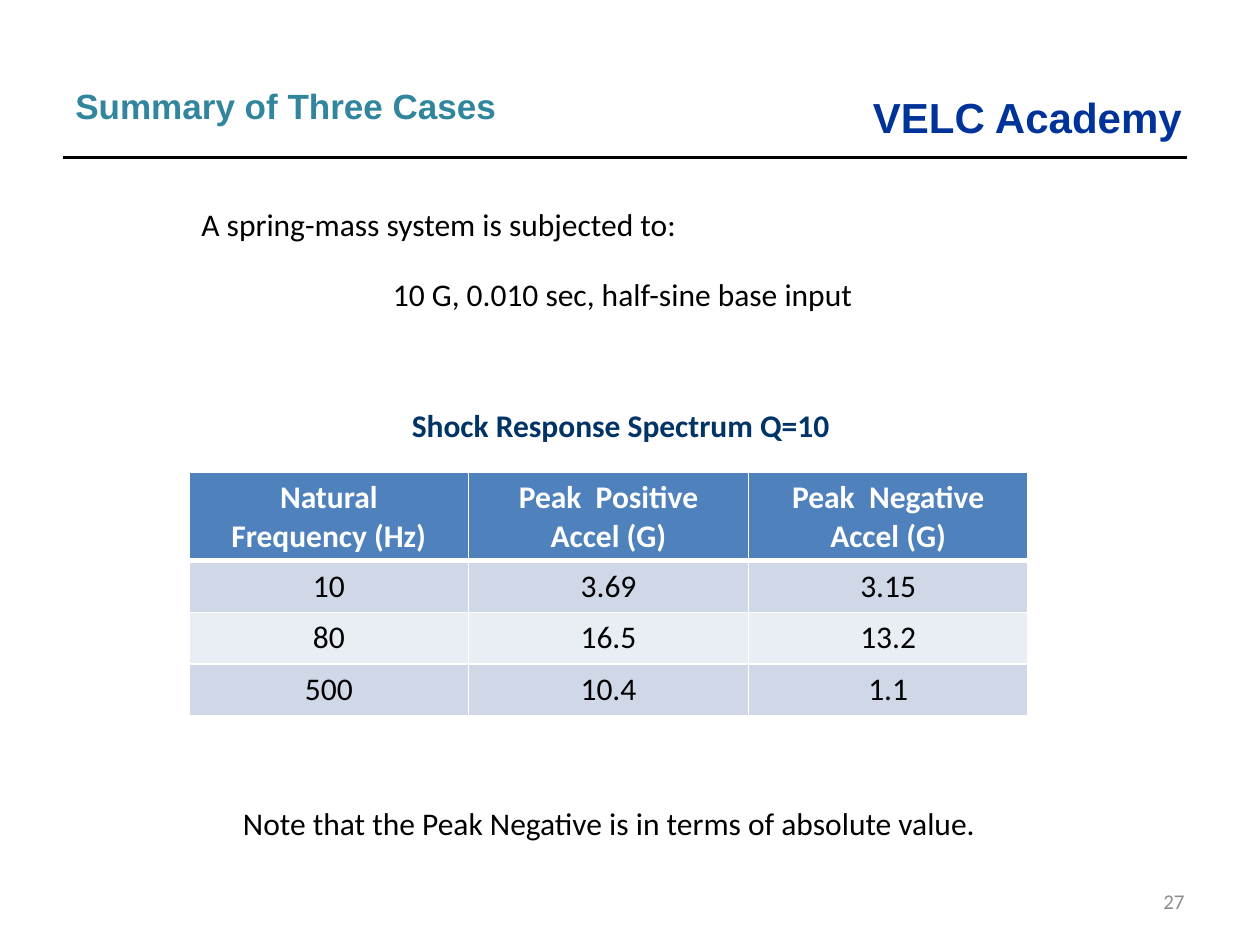
"""Build the slide that summarises three shock response cases."""
from lxml import etree
from pptx import Presentation
from pptx.dml.color import RGBColor
from pptx.enum.shapes import MSO_CONNECTOR
from pptx.enum.text import MSO_ANCHOR, PP_ALIGN
from pptx.oxml.ns import qn
from pptx.util import Inches, Pt

LEFT, CENTER, RIGHT = PP_ALIGN.LEFT, PP_ALIGN.CENTER, PP_ALIGN.RIGHT
TOP, MIDDLE = MSO_ANCHOR.TOP, MSO_ANCHOR.MIDDLE
STRAIGHT = MSO_CONNECTOR.STRAIGHT

BLACK = RGBColor(0x00, 0x00, 0x00)
WHITE = RGBColor(0xFF, 0xFF, 0xFF)
GRAY = RGBColor(0x8C, 0x8C, 0x8C)
TEAL = RGBColor(0x31, 0x85, 0x9C)
ROYAL = RGBColor(0x00, 0x33, 0x99)
NAVY = RGBColor(0x00, 0x33, 0x66)
HEADER_BLUE = RGBColor(0x4F, 0x81, 0xBD)
BANDS = (RGBColor(0xD0, 0xD8, 0xE8), RGBColor(0xE9, 0xED, 0xF4))

ACADEMY = "VELC Academy"
TITLE = "Summary of Three Cases"
PAGE = "27"
INPUT_LINES = ["A spring-mass system is subjected to:",
               "10 G, 0.010 sec, half-sine base input"]
TABLE_TITLE = "Shock Response Spectrum Q=10"
NOTE = "Note that the Peak Negative is in terms of absolute value."
CASES = [
    ["Natural\vFrequency (Hz)", "Peak  Positive\nAccel (G)", "Peak  Negative Accel (G)"],
    ["10", "3.69", "3.15"],
    ["80", "16.5", "13.2"],
    ["500", "10.4", "1.1"],
]
TABLE_LEFT, TABLE_TOP = 1.5, 3.75
COLUMN_WIDTH, HEADER_HEIGHT, ROW_HEIGHT = 2.22, 0.69, 0.41


def style(paragraph, size, color, bold=False, font="Calibri", align=LEFT):
    paragraph.alignment = align
    paragraph.font.name = font
    paragraph.font.size = Pt(size)
    paragraph.font.bold = bold
    paragraph.font.color.rgb = color


def add_text(slide, box, lines, size, color, anchor=TOP, wrap=True, gap=0, **look):
    frame = slide.shapes.add_textbox(*map(Inches, box)).text_frame
    frame.word_wrap = wrap
    frame.vertical_anchor = anchor
    frame.text = "\n".join(lines)
    for paragraph in frame.paragraphs:
        style(paragraph, size, color, **look)
        paragraph.space_before = paragraph.space_after = Pt(gap)
    return frame


def add_border(cell, side, width):
    line = etree.SubElement(cell._tc.get_or_add_tcPr(), qn(f"a:ln{side}"), w=str(Pt(width)))
    fill = etree.SubElement(line, qn("a:solidFill"))
    etree.SubElement(fill, qn("a:srgbClr"), val=str(WHITE))


def add_cases(slide):
    rows, columns = len(CASES), len(CASES[0])
    height = HEADER_HEIGHT + (rows - 1) * ROW_HEIGHT
    table = slide.shapes.add_table(
        rows, columns, Inches(TABLE_LEFT), Inches(TABLE_TOP),
        Inches(columns * COLUMN_WIDTH), Inches(height)).table
    for column in table.columns:
        column.width = Inches(COLUMN_WIDTH)
    for r, values in enumerate(CASES):
        header = r == 0
        table.rows[r].height = Inches(HEADER_HEIGHT if header else ROW_HEIGHT)
        for c, value in enumerate(values):
            cell = table.cell(r, c)
            cell.text = value
            for paragraph in cell.text_frame.paragraphs:
                style(paragraph, 18, WHITE if header else BLACK, bold=header, align=CENTER)
            for side in "LRTB":
                heavy = (header and side == "B") or (r == 1 and side == "T")
                add_border(cell, side, 3 if heavy else 1)
            cell.fill.solid()
            cell.fill.fore_color.rgb = HEADER_BLUE if header else BANDS[(r - 1) % 2]


def main():
    deck = Presentation()
    deck.slide_width, deck.slide_height = Inches(10), Inches(7.5)
    slide = deck.slides.add_slide(deck.slide_layouts[6])

    add_text(slide, (6.83, 0.68, 2.72, 0.5), [ACADEMY], 24, ROYAL,
             wrap=False, bold=True, font="Arial")
    rule = slide.shapes.add_connector(
        STRAIGHT, Inches(0.5), Inches(1.25), Inches(9.42), Inches(1.25))
    rule.line.color.rgb = BLACK
    rule.line.width = Pt(2.25)
    etree.SubElement(rule._element.spPr, qn("a:effectLst"))

    add_text(slide, (7.17, 6.95, 2.33, 0.4), [PAGE], 12, GRAY, anchor=MIDDLE, align=RIGHT)
    add_text(slide, (0.5, 0.62, 5, 0.44), [TITLE], 20, TEAL, gap=2, bold=True, font="Arial")
    add_cases(slide)
    shock = add_text(slide, (1.5, 1.58, 5.75, 0.96), INPUT_LINES, 18, BLACK, gap=9)
    shock.paragraphs[1]._p.get_or_add_pPr().set("marL", str(Inches(1.52)))
    add_text(slide, (3.17, 3.17, 3.58, 0.4), [TABLE_TITLE], 18, NAVY, bold=True)
    add_text(slide, (1.83, 6.33, 6.92, 0.4), [NOTE], 18, BLACK)

    deck.save("out.pptx")


if __name__ == "__main__":
    main()
